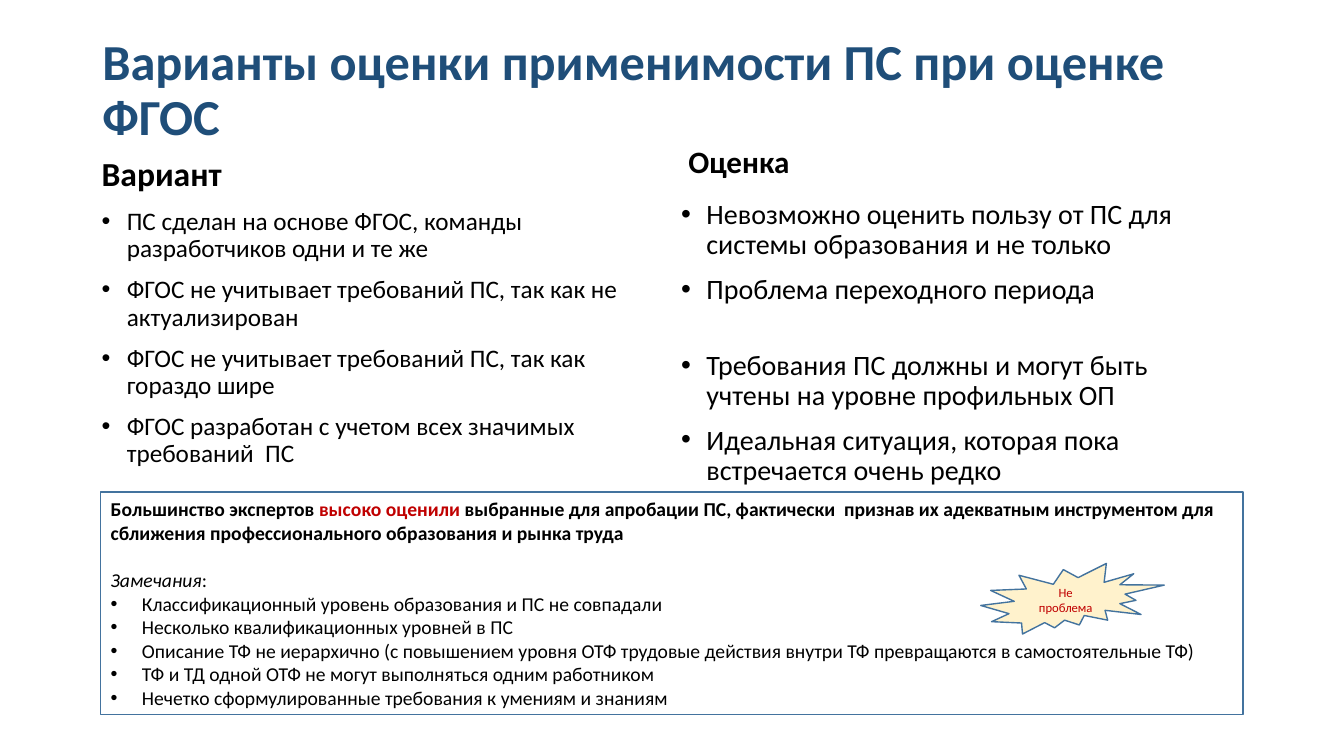
from dataclasses import dataclass

from lxml.etree import SubElement
from pptx import Presentation
from pptx.dml.color import RGBColor
from pptx.enum.shapes import MSO_SHAPE
from pptx.enum.text import MSO_ANCHOR, PP_ALIGN
from pptx.oxml.ns import qn
from pptx.util import Inches, Pt

COLUMNS, ROWS = 160, 90
FONT = "Calibri"
BLACK, WHITE, NAVY, RED = "000000", "FFFFFF", "1F4E79", "C00000"
OUTLINE, CREAM = "43739E", "FFF2CC"


@dataclass(frozen=True)
class Area:
    """Place in grid columns and rows."""
    column: float
    row: float
    columns: float
    rows: float


@dataclass(frozen=True)
class Run:
    text: str
    color: str = BLACK
    bold: bool = False
    italic: bool = False


@dataclass(frozen=True)
class Paragraph:
    runs: tuple[Run, ...]
    bullet_indent: float = 0
    before: float = 0
    spacing: float = 1.0
    align: PP_ALIGN = PP_ALIGN.LEFT


@dataclass(frozen=True)
class Block:
    area: Area
    size: float
    paragraphs: tuple[Paragraph, ...]
    anchor: MSO_ANCHOR = MSO_ANCHOR.MIDDLE
    outline: MSO_SHAPE | None = None
    fill: str = WHITE


def rgb(color: str) -> RGBColor:
    return RGBColor.from_string(color)


def heading(text: str) -> tuple[Paragraph, ...]:
    return (Paragraph((Run(text, bold=True),), before=10, spacing=0.8),)


def point(text: str, before: float = 10) -> Paragraph:
    return Paragraph((Run(text),), bullet_indent=0.25, before=before, spacing=0.9)


def remark(text: str) -> Paragraph:
    return Paragraph((Run(text),), bullet_indent=0.31)


def add_bullet(paragraph, indent: float) -> None:
    properties = paragraph._p.get_or_add_pPr()
    properties.set("marL", str(Inches(indent)))
    properties.set("indent", str(-Inches(indent)))
    SubElement(properties, qn("a:buFont")).set("typeface", "Arial")
    SubElement(properties, qn("a:buChar")).set("char", "•")


def write(frame, block: Block) -> None:
    frame.word_wrap = True
    frame.vertical_anchor = block.anchor
    for number, content in enumerate(block.paragraphs):
        paragraph = frame.add_paragraph() if number else frame.paragraphs[0]
        paragraph.alignment = content.align
        paragraph.line_spacing = content.spacing
        paragraph.space_before = Pt(content.before)
        if content.bullet_indent:
            add_bullet(paragraph, content.bullet_indent)
        for part in content.runs:
            run = paragraph.add_run()
            run.text = part.text
            run.font.name = FONT
            run.font.size = Pt(block.size)
            run.font.bold = part.bold
            run.font.italic = part.italic
            run.font.color.rgb = rgb(part.color)


def draw(slide, block: Block, column: float, row: float) -> None:
    area = block.area
    place = (round(area.column * column), round(area.row * row),
             round(area.columns * column), round(area.rows * row))
    if block.outline is None:
        holder = slide.shapes.add_textbox(*place)
    else:
        holder = slide.shapes.add_shape(block.outline, *place)
        holder.shadow.inherit = False
        holder.fill.solid()
        holder.fill.fore_color.rgb = rgb(block.fill)
        holder.line.color.rgb = rgb(OUTLINE)
        holder.line.width = Pt(1)
    write(holder.text_frame, block)


BLOCKS = (
    Block(Area(11, 4.8, 138, 12.24), 36, (
        Paragraph((Run("Варианты оценки применимости ПС при оценке ФГОС", NAVY, bold=True),),
                  spacing=0.9),)),
    Block(Area(10.92, 18.24, 67.68, 5.28), 24, heading("Вариант"), MSO_ANCHOR.BOTTOM),
    Block(Area(10.92, 24.24, 67.68, 53), 18, (
        point("ПС сделан на основе ФГОС, команды разработчиков одни и те же"),
        point("ФГОС не учитывает требований ПС, так как не актуализирован"),
        point("ФГОС не учитывает требований ПС, так как гораздо шире"),
        point("ФГОС разработан с учетом всех значимых требований  ПС"),
    ), MSO_ANCHOR.TOP),
    Block(Area(80.76, 17.04, 68, 4.92), 22.2, heading("Оценка"), MSO_ANCHOR.BOTTOM),
    Block(Area(79.92, 23.28, 68, 54.24), 20, (
        point("Невозможно оценить пользу от ПС для системы образования и не только"),
        point("Проблема переходного периода"),
        point("Требования ПС должны и могут быть учтены на уровне профильных ОП", before=33),
        point("Идеальная ситуация, которая пока встречается очень редко"),
    ), MSO_ANCHOR.TOP),
    Block(Area(12, 58.56, 136, 26.52), 14, (
        Paragraph((
            Run("Большинство экспертов ", bold=True),
            Run("высоко оценили ", RED, bold=True),
            Run("выбранные для апробации ПС, фактически  признав их адекватным "
                "инструментом для сближения профессионального образования и рынка труда",
                bold=True),
        )),
        Paragraph((Run("Замечания", italic=True), Run(":")), before=17),
        remark("Классификационный уровень образования и ПС не совпадали"),
        remark("Несколько квалификационных уровней в ПС"),
        remark("Описание ТФ не иерархично (с повышением уровня ОТФ трудовые действия "
               "внутри ТФ превращаются в самостоятельные ТФ)"),
        remark("ТФ и ТД одной ОТФ не могут выполняться одним работником"),
        remark("Нечетко сформулированные требования к умениям и знаниям"),
    ), outline=MSO_SHAPE.RECTANGLE),
    Block(Area(116.76, 67.08, 21.84, 8.4), 9, (
        Paragraph((Run("Не проблема", RED),), align=PP_ALIGN.CENTER),
    ), outline=MSO_SHAPE.EXPLOSION2, fill=CREAM),
)


def main() -> None:
    deck = Presentation()
    deck.slide_width, deck.slide_height = Inches(13.33), Inches(7.5)
    slide = deck.slides.add_slide(deck.slide_layouts[6])
    for block in BLOCKS:
        draw(slide, block, deck.slide_width / COLUMNS, deck.slide_height / ROWS)
    deck.save("out.pptx")


if __name__ == "__main__":
    main()
